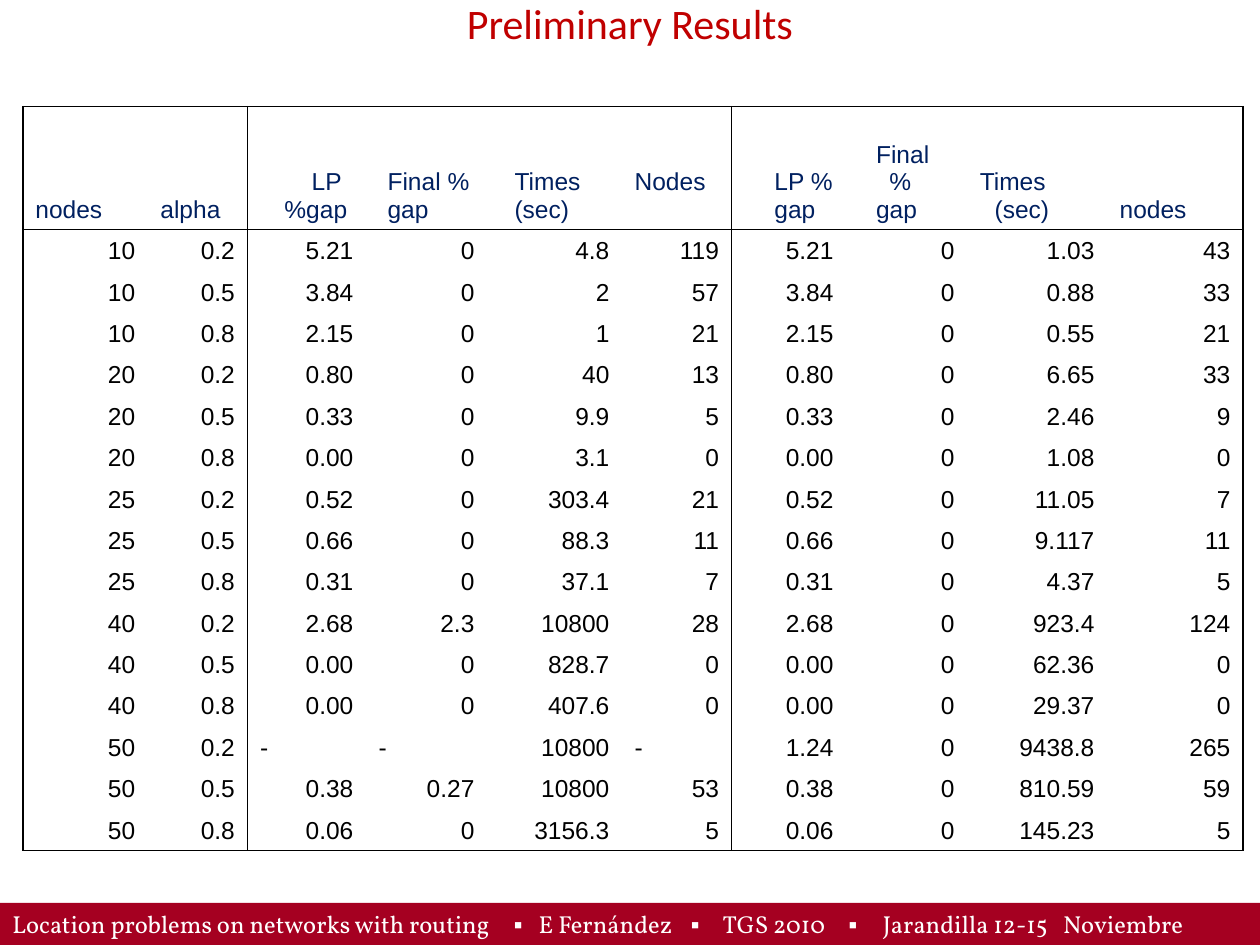
from lxml import etree
from pptx import Presentation
from pptx.dml.color import RGBColor
from pptx.enum import shapes, text
from pptx.oxml import ns
from pptx.util import Cm, Pt


def color(code):
    return RGBColor.from_string(code)


def write(par, words, size=14, face="Arial", ink="000000", side="LEFT", indent=0):
    """Add one run to a paragraph and set the paragraph's alignment and indent."""
    par.alignment = getattr(text.PP_ALIGN, side)
    if indent:
        par._p.get_or_add_pPr().set("marL", str(Cm(indent)))
    run = par.add_run()
    run.text = words
    run.font.size = Pt(size)
    run.font.name = face
    run.font.color.rgb = color(ink)


deck = Presentation()
deck.slide_width, deck.slide_height = Cm(25.4), Cm(19.05)
slide = deck.slides.add_slide(deck.slide_layouts[6])

# Footer band
band = slide.shapes.add_shape(
    shapes.MSO_SHAPE.RECTANGLE, Cm(0), Cm(18.2), Cm(25.4), Cm(0.85))
band.shadow.inherit = False
band.fill.solid()
band.fill.fore_color.rgb = color("A50021")
band.line.fill.background()
frame = band.text_frame
frame.word_wrap = False
frame.vertical_anchor = text.MSO_ANCHOR.MIDDLE
frame.margin_top = frame.margin_bottom = 0
par = frame.paragraphs[0]
tabs = etree.SubElement(par._p.get_or_add_pPr(), ns.qn("a:tabLst"))
for stop in (10.11, 10.61, 13.68, 14.32, 16.86, 17.55, 21.18):
    etree.SubElement(tabs, ns.qn("a:tab"), pos=str(Cm(stop)), algn="l")
parts = ("Location problems on networks with routing", "E Fernández",
         "TGS 2010", "Jarandilla 12-15\tNoviembre")
for i, part in enumerate(parts):
    if i:
        write(par, "\t▪\t", face="Calibri", ink="FFFFFF")
    write(par, part, face="Vollkorn", ink="FFFFFF")

# Title
title = slide.shapes.add_textbox(Cm(1.27), Cm(-0.28), Cm(22.86), Cm(1.47))
title.text_frame.word_wrap = True
title.text_frame.vertical_anchor = text.MSO_ANCHOR.MIDDLE
write(title.text_frame.paragraphs[0], "Preliminary Results",
      size=24, face="Calibri", ink="C00000", side="CENTER")

# Results table: each heading is a list of (line, indent)
heads = [
    [("nodes", 0)], [("alpha", 0)],
    [("LP", 1.04), ("%gap", 0.49)], [("Final % gap", 0.18)],
    [("Times", 0.3), ("(sec)", 0.3)], [("Nodes", 0)],
    [],
    [("LP % gap", 0)], [("Final", 0.35), ("%", 0.62), ("gap", 0.35)],
    [("Times", 0), ("(sec)", 0.3)], [("nodes", 0)],
]
# nodes, alpha, four results of the first method, four of the second
data = """
10 0.2 5.21 0 4.8 119 5.21 0 1.03 43
10 0.5 3.84 0 2 57 3.84 0 0.88 33
10 0.8 2.15 0 1 21 2.15 0 0.55 21
20 0.2 0.80 0 40 13 0.80 0 6.65 33
20 0.5 0.33 0 9.9 5 0.33 0 2.46 9
20 0.8 0.00 0 3.1 0 0.00 0 1.08 0
25 0.2 0.52 0 303.4 21 0.52 0 11.05 7
25 0.5 0.66 0 88.3 11 0.66 0 9.117 11
25 0.8 0.31 0 37.1 7 0.31 0 4.37 5
40 0.2 2.68 2.3 10800 28 2.68 0 923.4 124
40 0.5 0.00 0 828.7 0 0.00 0 62.36 0
40 0.8 0.00 0 407.6 0 0.00 0 29.37 0
50 0.2 - - 10800 - 1.24 0 9438.8 265
50 0.5 0.38 0.27 10800 53 0.38 0 810.59 59
50 0.8 0.06 0 3156.3 5 0.06 0 145.23 5
"""
rows = [line.split() for line in data.strip().splitlines()]
wides = (2.52, 2.01, 2.39, 2.44, 2.72, 2.21, 0.59, 1.7, 2.44, 2.82, 2.74)
last, tall, high = len(rows), 2.48, 0.81
table = slide.shapes.add_table(
    last + 1, len(wides), Cm(0.46), Cm(2.15),
    Cm(sum(wides)), Cm(tall + last * high)).table
table.first_row = table.horz_banding = False
for col, wide in zip(table.columns, wides):
    col.width = Cm(wide)

for r, row in enumerate(table.rows):
    row.height = Cm(high if r else tall)
    for c, cell in enumerate(row.cells):
        cell.vertical_anchor = text.MSO_ANCHOR.BOTTOM
        cell.margin_top = cell.margin_bottom = Cm(0.12)
        edges = {"L": c in (0, 2, 6), "R": c in (1, 5, 10),
                 "T": r in (0, 1), "B": r in (0, last)}
        for edge, shown in edges.items():
            line = etree.SubElement(
                cell._tc.get_or_add_tcPr(), ns.qn("a:ln" + edge), w=str(Pt(1)))
            if shown:
                fill = etree.SubElement(line, ns.qn("a:solidFill"))
                etree.SubElement(fill, ns.qn("a:srgbClr"), val="000000")
            else:
                etree.SubElement(line, ns.qn("a:noFill"))
        cell.fill.background()

        frame = cell.text_frame
        par = frame.paragraphs[0]
        if c == 6:
            par._p.get_or_add_endParaRPr().set("sz", "1400")
        elif r:
            value = rows[r - 1][c - (c > 6)]
            write(par, value, side="LEFT" if value == "-" else "RIGHT")
        else:
            cell.margin_right = Cm(0.1)
            if c == 5:
                cell.margin_bottom = Cm(0.68)
            for i, (words, indent) in enumerate(heads[c]):
                write(frame.add_paragraph() if i else par, words,
                      ink="002060", indent=indent)

deck.save("out.pptx")
